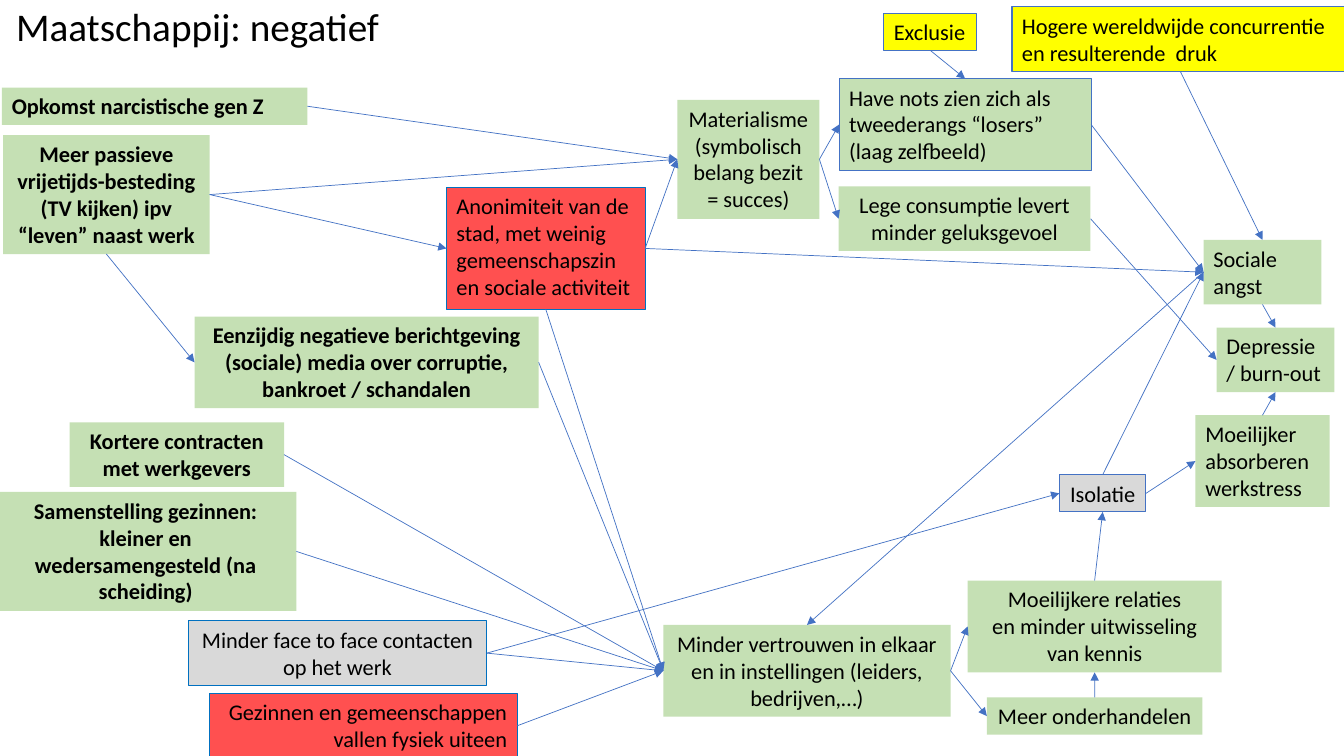
import pptx
import pptx.util
import pptx.dml.color
import pptx.enum.shapes
import pptx.enum.text
import pptx.oxml
import pptx.oxml.ns

Pt = pptx.util.Pt
RGB = pptx.dml.color.RGBColor.from_string
PP = pptx.enum.text.PP_ALIGN
MSO = pptx.enum.text.MSO_ANCHOR

COLORS = {
    "text": "000000",
    "green": "C5E0B4",
    "red": "FF5050",
    "grey": "D9D9D9",
    "yellow": "FFFF00",
    "blue": "4472C4",
    "edge": "0070C0",
}
TOP, LEFT, BOTTOM, RIGHT = range(4)


def add_run(p, text, size, bold=False):
    r = p.add_run()
    r.text = text
    r.font.name = "Calibri"
    r.font.size = Pt(size)
    r.font.bold = bold
    r.font.color.rgb = RGB(COLORS["text"])


prs = pptx.Presentation()
prs.slide_width, prs.slide_height = Pt(960), Pt(540)
s = prs.slides.add_slide(prs.slide_layouts[5])

title = s.shapes.title
title.left, title.top, title.width, title.height = Pt(4.3), Pt(-18), Pt(313.2), Pt(77.8)
tf = title.text_frame
tf.word_wrap = True
tf.vertical_anchor = MSO.MIDDLE
p = tf.paragraphs[0]
p.alignment = PP.LEFT
p.line_spacing = 0.9
add_run(p, "Maatschappij: negatief", 28)

boxes = [
    ("passief", 2.2, 96.5, 147.6, 85, "green", None, PP.CENTER, True,
     ["Meer passieve vrijetijds-besteding (TV kijken) ipv “leven” naast werk"]),
    ("samenstelling", -3.6, 351.4, 215.3, 85, "green", None, PP.CENTER, True,
     ["Samenstelling gezinnen: kleiner en wedersamengesteld (na scheiding)"]),
    ("contracten", 49.7, 301.7, 153.2, 46.1, "green", None, PP.CENTER, True,
     ["Kortere contracten met werkgevers"]),
    ("vertrouwen", 473.8, 446.4, 205.2, 65.5, "green", None, PP.CENTER, False,
     ["Minder vertrouwen in elkaar en in instellingen (leiders, bedrijven,…)"]),
    ("media", 139, 226.1, 245.8, 65.5, "green", None, PP.CENTER, True,
     ["Eenzijdig negatieve berichtgeving (sociale) media over corruptie, bankroet / schandalen"]),
    ("gezinnen", 149.8, 495.4, 219.6, 46.1, "red", "edge", PP.RIGHT, False,
     ["Gezinnen en gemeenschappen vallen fysiek uiteen"]),
    ("contacten", 134.6, 443.5, 213.1, 46.1, "grey", "edge", PP.CENTER, False,
     ["Minder face to face contacten op het werk"]),
    ("anonimiteit", 319, 133.9, 141.8, 87.1, "red", "edge", PP.LEFT, False,
     ["Anonimiteit van de stad, met weinig gemeenschapszin en sociale activiteit"]),
    ("gen_z", 1.4, 62.6, 218.2, 26.6, "green", None, PP.LEFT, True,
     ["Opkomst narcistische gen Z"]),
    ("angst", 859.7, 171.4, 84.2, 46.1, "green", None, PP.LEFT, False,
     ["Sociale angst"]),
    ("concurrentie", 722.9, 5, 240.5, 46.1, "yellow", "blue", PP.LEFT, False,
     ["Hogere wereldwijde concurrentie", "en resulterende  druk"]),
    ("isolatie", 756.7, 339.1, 61.9, 26.6, "grey", "blue", PP.CENTER, False,
     ["Isolatie"]),
    ("onderhandelen", 704.9, 498.2, 154.1, 26.6, "green", None, PP.CENTER, False,
     ["Meer onderhandelen"]),
    ("relaties", 691.2, 414.7, 181.4, 65.5, "green", None, PP.CENTER, False,
     ["Moeilijkere relaties", "en minder uitwisseling van kennis"]),
    ("consumptie", 599, 133.2, 180, 46.1, "green", None, PP.CENTER, False,
     ["Lege consumptie levert minder geluksgevoel"]),
    ("materialisme", 483.8, 71.3, 101.5, 85, "green", None, PP.CENTER, False,
     ["Materialisme", "(symbolisch belang bezit = succes)"]),
    ("have_nots", 599.4, 56.2, 180, 65.5, "green", "blue", PP.LEFT, False,
     ["Have nots zien zich als tweederangs “losers” (laag zelfbeeld)"]),
    ("exclusie", 631.4, 9.4, 66.2, 26.6, "yellow", "blue", PP.LEFT, False,
     ["Exclusie"]),
    ("werkstress", 853.9, 296.6, 95.8, 65.5, "green", None, PP.LEFT, False,
     ["Moeilijker absorberen werkstress"]),
    ("depressie", 869, 234, 84.2, 46.1, "green", None, PP.LEFT, False,
     ["Depressie / burn-out"]),
]
nodes = {}
for key, x, y, w, h, fill, line, align, bold, lines in boxes:
    sp = s.shapes.add_shape(pptx.enum.shapes.MSO_SHAPE.RECTANGLE, Pt(x), Pt(y), Pt(w), Pt(h))
    sp.shadow.inherit = False
    sp.fill.solid()
    sp.fill.fore_color.rgb = RGB(COLORS[fill])
    if line:
        sp.line.color.rgb = RGB(COLORS[line])
        sp.line.width = Pt(0.75)
    else:
        sp.line.fill.background()
    tf = sp.text_frame
    tf.word_wrap = key not in ("isolatie", "onderhandelen", "exclusie")
    tf.auto_size = pptx.enum.text.MSO_AUTO_SIZE.SHAPE_TO_FIT_TEXT
    tf.vertical_anchor = MSO.TOP
    for i, text in enumerate(lines):
        p = tf.add_paragraph() if i else tf.paragraphs[0]
        p.alignment = align
        add_run(p, text, 16, bold)
    nodes[key] = sp

arrows = [
    ("samenstelling", RIGHT, "vertrouwen", LEFT),
    ("passief", BOTTOM, "media", LEFT),
    ("media", RIGHT, "vertrouwen", LEFT),
    ("contracten", RIGHT, "vertrouwen", LEFT),
    ("gezinnen", RIGHT, "vertrouwen", LEFT),
    ("anonimiteit", BOTTOM, "vertrouwen", LEFT),
    ("contacten", RIGHT, "vertrouwen", LEFT),
    ("angst", LEFT, "vertrouwen", TOP),
    ("passief", RIGHT, "anonimiteit", LEFT),
    ("anonimiteit", RIGHT, "materialisme", LEFT),
    ("have_nots", RIGHT, "angst", LEFT),
    ("concurrentie", BOTTOM, "angst", TOP),
    ("anonimiteit", RIGHT, "angst", LEFT),
    ("vertrouwen", RIGHT, "onderhandelen", LEFT),
    ("vertrouwen", RIGHT, "relaties", LEFT),
    ("relaties", TOP, "isolatie", BOTTOM),
    ("onderhandelen", TOP, "relaties", BOTTOM),
    ("contacten", RIGHT, "isolatie", LEFT),
    ("materialisme", RIGHT, "consumptie", LEFT),
    ("passief", RIGHT, "materialisme", LEFT),
    ("materialisme", RIGHT, "have_nots", LEFT),
    ("gen_z", RIGHT, "materialisme", LEFT),
    ("exclusie", BOTTOM, "have_nots", TOP),
    ("isolatie", RIGHT, "werkstress", LEFT),
    ("isolatie", TOP, "angst", LEFT),
    ("werkstress", TOP, "depressie", BOTTOM),
    ("consumptie", RIGHT, "depressie", LEFT),
    ("angst", BOTTOM, "depressie", TOP),
]
for start, start_side, end, end_side in arrows:
    c = s.shapes.add_connector(pptx.enum.shapes.MSO_CONNECTOR.STRAIGHT, 0, 0, 0, 0)
    c.begin_connect(nodes[start], start_side)
    c.end_connect(nodes[end], end_side)
    c.line.color.rgb = RGB(COLORS["blue"])
    c.line.width = Pt(0.5)
    ln = c.line._get_or_add_ln()
    tail = pptx.oxml.parse_xml("<a:tailEnd %s type='triangle'/>" % pptx.oxml.ns.nsdecls("a"))
    ln.append(tail)
    effects = pptx.oxml.parse_xml("<a:effectLst %s/>" % pptx.oxml.ns.nsdecls("a"))
    ln.addnext(effects)

prs.save("out.pptx")
